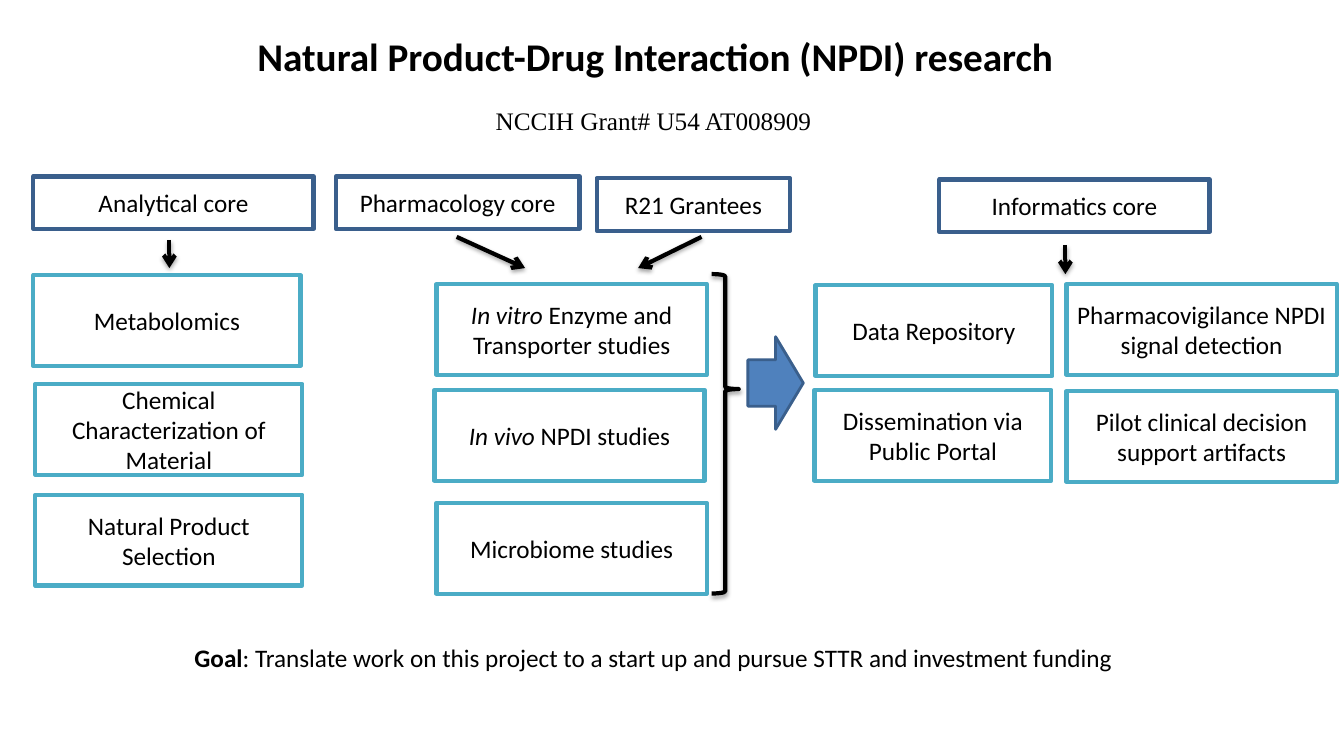
from lxml.etree import SubElement
from pptx import Presentation
from pptx.dml.color import RGBColor
from pptx.enum.shapes import MSO_CONNECTOR as Connector, MSO_SHAPE as Shape
from pptx.enum.text import MSO_ANCHOR as Anchor, PP_ALIGN as Align
from pptx.oxml.ns import qn
from pptx.util import Pt

BLACK = RGBColor(0, 0, 0)
NAVY = RGBColor(0x3A, 0x5F, 0x8C)
TEAL = RGBColor(0x4B, 0xAC, 0xC6)
BLUE = RGBColor(0x4F, 0x81, 0xBD)

# Content: every text is a list of (words, font format) spans
TITLE = [("Natural Product-Drug Interaction (NPDI) research", {"bold": True})]
GRANT = [("NCCIH Grant# U54 AT008909", {})]
GOAL = [
    ("Goal", {"bold": True}),
    (": Translate work on this project to a start up and pursue STTR "
     "and investment funding", {}),
]

# Cores: left, top, width, spans
CORE_HEIGHT = 37.4
CORES = [
    (23.8, 126, 200.2, [("Analytical core", {})]),
    (239.8, 126, 174.2, [("Pharmacology core", {})]),
    (426.2, 127.4, 138.2, [("R21 Grantees", {})]),
    (671, 128.2, 193, [("Informatics core", {})]),
]

# Activities by column: width, then (left, top, spans)
ACTIVITY_HEIGHT = 64.8
COLUMNS = [
    (190.8, [
        (23.8, 196.6, [("Metabolomics", {})]),
        (25.2, 274.3, [("Chemical Characterization of Material", {})]),
        (25.2, 353.5, [("Natural Product Selection", {})]),
    ]),
    (193, [
        (311.8, 203, [("In vitro", {"italic": True}),
                      (" Enzyme and Transporter studies", {})]),
        (310.3, 278.6, [("In vivo", {"italic": True}), (" NPDI studies", {})]),
        (311.8, 359.3, [("Microbiome studies", {})]),
    ]),
    (169.2, [
        (582.5, 203.8, [("Data Repository", {})]),
        (581.8, 278.6, [("Dissemination via Public Portal", {})]),
    ]),
    (193, [
        (761.8, 203, [("Pharmacovigilance NPDI signal detection", {})]),
        (761.8, 279.4, [("Pilot clinical decision support artifacts", {})]),
    ]),
]

# Arrows from cores to activities: start x, start y, end x, end y
ARROWS = [
    (121, 171.4, 121, 191.5),
    (326.2, 169.2, 375.1, 191.5),
    (501.1, 169.2, 455.8, 191.5),
    (761, 175, 761, 195.8),
]


def write(frame, spans, align=Align.CENTER, anchor=Anchor.MIDDLE,
          size=18, font="Calibri", wrap=True):
    frame.word_wrap = wrap
    frame.vertical_anchor = anchor
    para = frame.paragraphs[0]
    para.alignment = align
    for words, style in spans:
        span = para.add_run()
        span.text = words
        span.font.color.rgb = BLACK
        for name, value in {"name": font, "size": Pt(size), **style}.items():
            setattr(span.font, name, value)


def add_text(page, place, spans, **layout):
    box = page.shapes.add_textbox(*map(Pt, place))
    write(box.text_frame, spans, **layout)


def add_outline(page, kind, place, color, width=3, fill=None):
    shape = page.shapes.add_shape(kind, *map(Pt, place))
    shape.shadow.inherit = False
    shape.line.color.rgb = color
    shape.line.width = Pt(width)
    if fill is None:
        shape.fill.background()
    else:
        shape.fill.solid()
        shape.fill.fore_color.rgb = fill
    return shape


def add_shadow(properties):
    effects = properties.find(qn("a:effectLst"))
    if effects is None:
        effects = SubElement(properties, qn("a:effectLst"))
    shadow = SubElement(effects, qn("a:outerShdw"), blurRad=str(Pt(3.1)),
                        dist=str(Pt(1.8)), dir="5400000", rotWithShape="0")
    color = SubElement(shadow, qn("a:srgbClr"), val=str(BLACK))
    SubElement(color, qn("a:alpha"), val="35000")


def add_arrow(page, ends):
    arrow = page.shapes.add_connector(Connector.STRAIGHT, *map(Pt, ends))
    arrow.line.color.rgb = BLACK
    arrow.line.width = Pt(3)
    properties = arrow._element.spPr
    SubElement(properties.find(qn("a:ln")), qn("a:tailEnd"), type="arrow")
    add_shadow(properties)


def main():
    deck = Presentation()
    deck.slide_width, deck.slide_height = Pt(960), Pt(540)
    page = deck.slides.add_slide(deck.slide_layouts[6])

    # Headings
    add_text(page, (144, 18.7, 648, 41.8), TITLE, size=28)
    add_text(page, (347, 72, 242, 28.8), GRANT, align=Align.LEFT,
             anchor=Anchor.TOP, font="Times New Roman", wrap=False)

    # Cores and their activities
    for left, top, width, spans in CORES:
        box = add_outline(page, Shape.RECTANGLE,
                          (left, top, width, CORE_HEIGHT), NAVY)
        write(box.text_frame, spans)
    for width, activities in COLUMNS:
        for left, top, spans in activities:
            box = add_outline(page, Shape.RECTANGLE,
                              (left, top, width, ACTIVITY_HEIGHT), TEAL)
            write(box.text_frame, spans)
    for ends in ARROWS:
        add_arrow(page, ends)

    # Brace and block arrow leading to informatics
    brace = add_outline(page, Shape.RIGHT_BRACE,
                        (508.3, 195.8, 19.4, 228.2), BLACK)
    brace.adjustments[0], brace.adjustments[1] = 0.08, 0.36
    add_shadow(brace._element.spPr)
    add_outline(page, Shape.RIGHT_ARROW, (534.2, 240.5, 39.6, 66.2),
                NAVY, width=2, fill=BLUE)

    # Goal
    add_text(page, (131.8, 455, 750.2, 28.8), GOAL,
             align=Align.LEFT, anchor=Anchor.TOP)

    deck.save("out.pptx")


if __name__ == "__main__":
    main()
